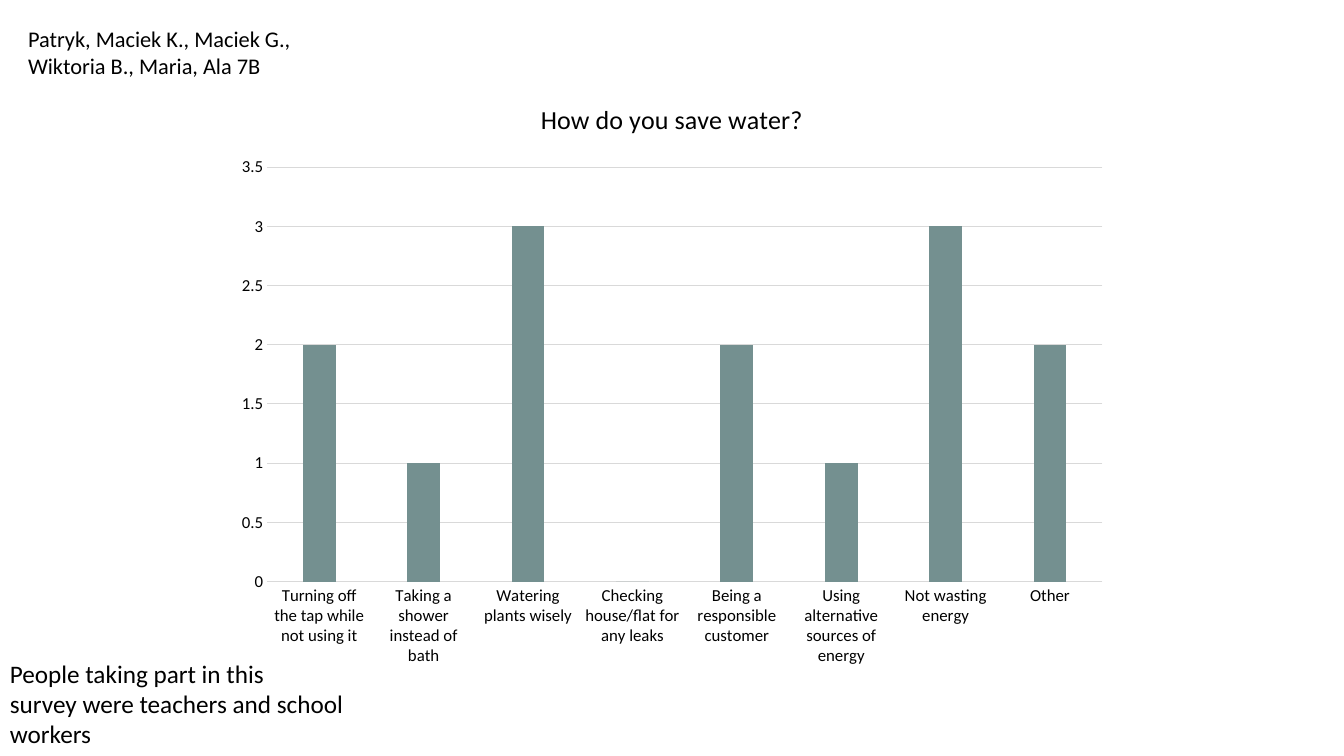
from pptx import Presentation
from pptx.chart.data import CategoryChartData
from pptx.dml.color import RGBColor
from pptx.enum.chart import XL_CHART_TYPE as ChartType, XL_TICK_MARK as TickMark
from pptx.util import Inches, Pt

FONT = "Calibri"
BLACK, GRID, TEAL = "000000", "D9D9D9", "749090"

QUESTION = "How do you save water?"
ANSWERS = {
    "Turning off the tap while not using it": 2,
    "Taking a shower instead of bath": 1,
    "Watering plants wisely": 3,
    "Checking house/flat for any leaks": 0,
    "Being a responsible customer": 2,
    "Using alternative sources of energy": 1,
    "Not wasting energy": 3,
    "Other": 2,
}
AUTHORS = ["Patryk, Maciek K., Maciek G.,", "Wiktoria B., Maria, Ala 7B"]
RESPONDENTS = ["People taking part in this survey\u00a0were\u00a0teachers and school workers"]


def rgb(color):
    return RGBColor.from_string(color)


def style(font, size, color=BLACK):
    font.name, font.size, font.bold = FONT, Pt(size), False
    font.color.rgb = rgb(color)


def add_text(slide, lines, box, size, color=BLACK):
    frame = slide.shapes.add_textbox(*map(Inches, box)).text_frame
    frame.word_wrap = True
    for index, line in enumerate(lines):
        paragraph = frame.paragraphs[0] if index == 0 else frame.add_paragraph()
        run = paragraph.add_run()
        run.text = line
        style(run.font, size, color)


def rule(line):
    line.color.rgb = rgb(GRID)
    line.width = Pt(0.75)


def add_survey_chart(slide, box):
    survey = CategoryChartData()
    survey.categories = ANSWERS.keys()
    survey.add_series(QUESTION, ANSWERS.values())
    chart = slide.shapes.add_chart(
        ChartType.COLUMN_CLUSTERED, *map(Inches, box), survey).chart
    style(chart.font, 10)
    chart.has_legend = False

    chart.has_title = True
    title = chart.chart_title.text_frame
    title.text = QUESTION
    style(title.paragraphs[0].runs[0].font, 18.6)
    chart.chart_title.include_in_layout = False

    answers, counts = chart.category_axis, chart.value_axis
    for axis in (answers, counts):
        axis.major_tick_mark = axis.minor_tick_mark = TickMark.NONE
        style(axis.tick_labels.font, 12)
    rule(answers.format.line)
    counts.format.line.fill.background()
    counts.has_major_gridlines = True
    rule(counts.major_gridlines.format.line)
    counts.minimum_scale, counts.maximum_scale, counts.major_unit = 0, 3.5, 0.5

    plot = chart.plots[0]
    plot.gap_width, plot.overlap = 219, -27
    plot.vary_by_categories = False
    bars = plot.series[0].format.fill
    bars.solid()
    bars.fore_color.rgb = rgb(TEAL)


deck = Presentation()
deck.slide_width, deck.slide_height = Inches(13.33), Inches(7.5)
slide = deck.slides.add_slide(deck.slide_layouts[6])
add_survey_chart(slide, (2.22, 0.79, 8.89, 5.93))
add_text(slide, RESPONDENTS, (0, 6.48, 3.63, 1.01), size=18)
add_text(slide, AUTHORS, (0.18, 0.2, 4.07, 0.64), size=16)
deck.save("out.pptx")
